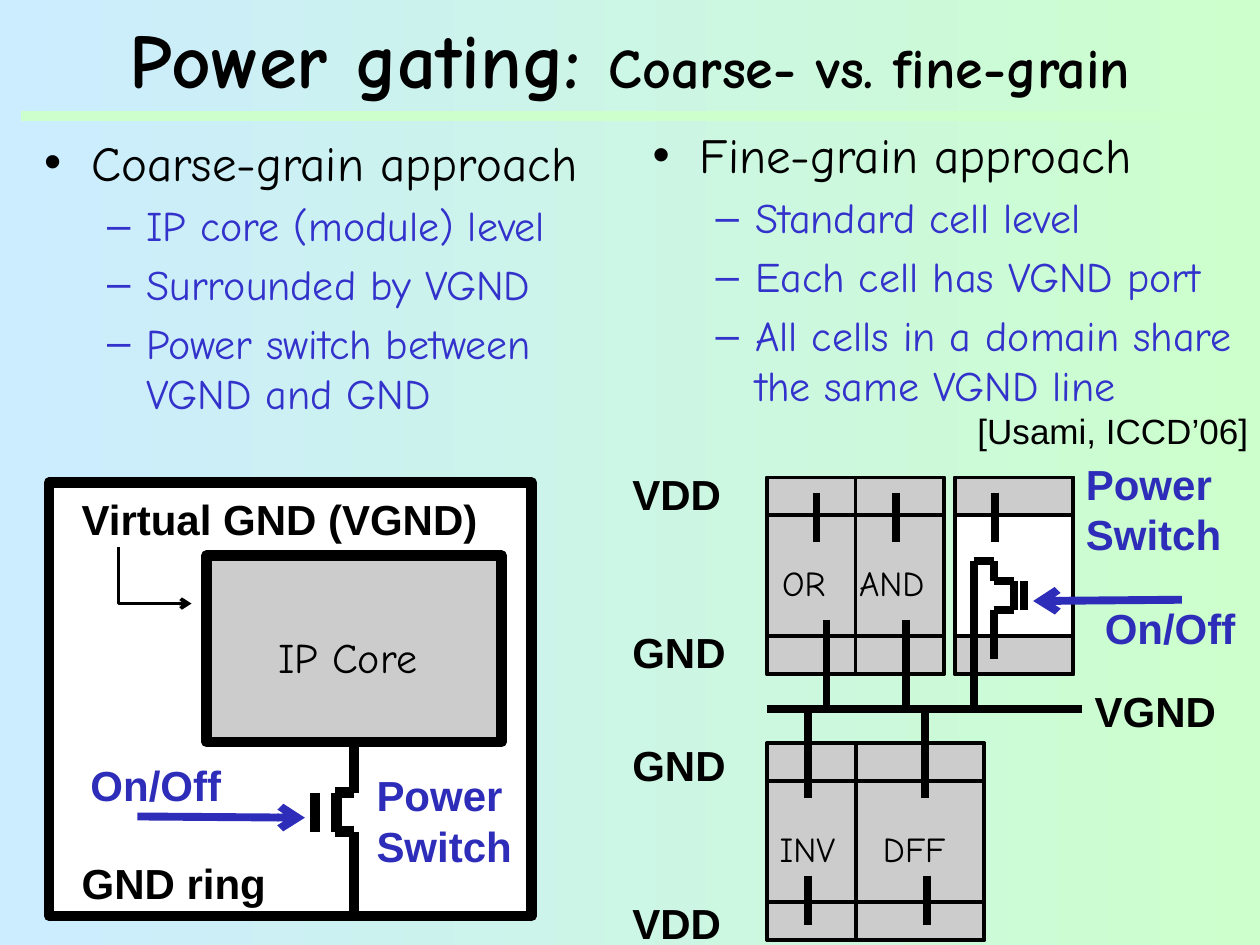
from pptx import Presentation
from pptx.dml.color import RGBColor
from pptx.enum.shapes import MSO_CONNECTOR, MSO_SHAPE
from pptx.enum.text import MSO_ANCHOR, MSO_AUTO_SIZE, PP_ALIGN
from pptx.oxml.ns import qn
from pptx.util import Inches, Pt
from lxml.etree import SubElement

THEME = dict(
    black="000000", white="FFFFFF", gray="CCCCCC", blue="2D2DB9", item="3333CC",
    sky="CCECFF", mint="CCFFCC", hand="Comic Neue", sans="Arial",
    title=44, sub=32, head=28, text=24, small=20, thick=6, wire=4.5, edge=2.25, thin=2,
)

TITLE = [("Power gating: ", "title"), ("Coarse- vs. fine-grain", "sub")]
LISTS = [
    ((0.25, 1, 4.67, 2.05), "Coarse-grain approach",
     ["IP core (module) level", "Surrounded by VGND",
      "Power switch between VGND and GND"]),
    ((5.08, 0.94, 5.08, 2.42), "Fine-grain approach",
     ["Standard cell level", "Each cell has VGND port",
      "All cells in a domain share the same VGND line"]),
]
BOXES = [
    ((0.39, 3.83, 3.83, 3.44), "white"),
    ((1.64, 4.41, 2.34, 1.48), "gray"),
]
TOP, LOW, TALL, RAIL = 3.79, 5.9, 1.56, 0.3
CELLS = [
    (7.58, TOP, 0.94, "white"),
    (6.09, TOP, 0.7, "gray"),
    (6.79, TOP, 0.7, "gray"),
    (6.09, LOW, 0.7, "gray"),
    (6.79, LOW, 1.02, "gray"),
]
GATES = [
    ("OR", (6.11, 4.41, 0.6, 0.44)),
    ("AND", (6.72, 4.41, 0.83, 0.44)),
    ("INV", (6.09, 6.52, 0.76, 0.44)),
    ("DFF", (6.91, 6.52, 0.74, 0.44)),
]
NAMES = [
    ("GND ring", (0.55, 6.76, 1.67, 0.51)),
    ("Virtual GND (VGND)", (0.55, 3.87, 3.46, 0.51)),
    ("VDD", (4.92, 3.67, 0.91, 0.51)),
    ("GND", (4.92, 4.92, 0.95, 0.51)),
    ("GND", (4.92, 5.82, 0.95, 0.51)),
    ("VDD", (4.92, 7.07, 0.91, 0.51)),
    ("VGND", (8.59, 5.39, 1.17, 0.51)),
]
NOTES = [
    ("Power\nSwitch", (2.89, 6.06, 1.33, 0.91)),
    ("On/Off", (0.62, 5.98, 1.33, 0.51)),
    ("Power\nSwitch", (8.52, 3.59, 1.33, 0.91)),
    ("On/Off", (8.67, 4.73, 1.33, 0.51)),
]
CORE = [
    (2.81, 5.9, 2.81, 6.29), (2.66, 6.29, 2.81, 6.29), (2.67, 6.29, 2.67, 6.6),
    (2.66, 6.6, 2.81, 6.6), (2.81, 6.6, 2.81, 7.27), (2.5, 6.29, 2.5, 6.6),
]
BUS = 5.63
FINE = [
    (6.09, BUS, 8.59, BUS), (7.73, BUS, 7.73, 4.45), (7.73, 4.45, 7.89, 4.45),
    (7.89, 4.45, 7.89, 4.61), (7.89, 4.61, 8.05, 4.61), (8.05, 4.61, 8.05, 4.84),
    (7.89, 4.84, 8.05, 4.84), (7.89, 4.84, 7.89, 5.23), (8.13, 4.61, 8.13, 4.84),
]
STUBS = [
    (3.91, 4.3, (6.48, 7.11, 7.9)),
    (4.92, BUS, (6.56, 7.19)),
    (BUS, 6.33, (6.41, 7.34)),
    (6.95, 7.34, (6.41, 7.36)),
]
ARROWS = [(1.09, 6.48, 2.42, 6.49), (9.38, 4.76, 8.2, 4.77)]
HOOK = [(0.94, 4.34), (0.94, 4.79), (1.52, 4.79)]


def tint(name):
    return RGBColor.from_string(THEME[name])


def write(par, text, size="text", color="black", font="sans", bold=False):
    for i, part in enumerate(text.split("\n")):
        if i:
            par.add_line_break()
        run = par.add_run()
        run.text = part
        run.font.size = Pt(THEME[size])
        run.font.name = THEME[font]
        run.font.bold = bold
        run.font.color.rgb = tint(color)


def place(shape, box):
    shape.left, shape.top, shape.width, shape.height = map(Inches, box)


def label(text, box, wrap=False, **style):
    frame = shapes.add_textbox(*map(Inches, box)).text_frame
    frame.word_wrap = wrap
    write(frame.paragraphs[0], text, **style)


def block(box, fill, width):
    shape = shapes.add_shape(MSO_SHAPE.RECTANGLE, *map(Inches, box))
    shape.shadow.inherit = False
    shape.fill.solid()
    shape.fill.fore_color.rgb = tint(fill)
    stroke(shape, width)


def stroke(shape, width, color="black", arrow=False):
    shape.line.width = Pt(THEME[width])
    shape.line.color.rgb = tint(color)
    if arrow:
        SubElement(shape.line._get_or_add_ln(), qn("a:tailEnd"), type="arrow")


def wire(ends, width="wire", color="black", arrow=False):
    line = shapes.add_connector(MSO_CONNECTOR.STRAIGHT, *map(Inches, ends))
    stroke(line, width, color, arrow)
    SubElement(line._element.spPr, qn("a:effectLst"))


deck = Presentation()
deck.slide_width, deck.slide_height = Inches(10), Inches(7.5)
slide = deck.slides.add_slide(deck.slide_layouts[3])
shapes = slide.shapes

back = slide.background.fill
back.gradient()
back.gradient_angle = 0
for stop, name in zip(back.gradient_stops, ("sky", "mint")):
    stop.color.rgb = tint(name)

title, *bodies = slide.placeholders
place(title, (0.25, 0.08, 9.5, 0.75))
title.text_frame.vertical_anchor = MSO_ANCHOR.MIDDLE
title.text_frame.auto_size = MSO_AUTO_SIZE.NONE
head = title.text_frame.paragraphs[0]
head.alignment = PP_ALIGN.CENTER
for text, size in TITLE:
    write(head, text, size=size, font="hand", bold=True)

for body, (box, top, items) in zip(bodies, LISTS):
    place(body, box)
    frame = body.text_frame
    frame.auto_size = MSO_AUTO_SIZE.NONE
    write(frame.paragraphs[0], top, size="head", font="hand")
    for item in items:
        par = frame.add_paragraph()
        par.level = 1
        write(par, item, color="item", font="hand")

wire((0.17, 0.92, 9.92, 0.92), "thick", "mint")

for box, fill in BOXES:
    block(box, fill, "thick")
for ends in CORE:
    wire(ends, "thick")
pen = shapes.build_freeform(*map(Inches, HOOK[0]))
pen.add_line_segments([tuple(map(Inches, dot)) for dot in HOOK[1:]], close=False)
hook = pen.convert_to_shape()
hook.shadow.inherit = False
hook.fill.background()
stroke(hook, "thin", arrow=True)

for left, top, width, fill in CELLS:
    block((left, top, width, TALL), fill, "edge")
    for rail in (top, top + TALL - RAIL):
        block((left, rail, width, RAIL), "gray", "edge")
for ends in FINE:
    wire(ends)
for start, end, spots in STUBS:
    for x in spots:
        wire((x, start, x, end))
for ends in ARROWS:
    wire(ends, color="blue", arrow=True)

label("IP Core", (2.11, 4.96, 1.39, 0.5), font="hand")
label("[Usami, ICCD’06]", (7.66, 3.2, 2.37, 0.44), size="small")
for text, box in GATES:
    label(text, box, size="small", font="hand")
for text, box in NAMES:
    label(text, box, bold=True)
for text, box in NOTES:
    label(text, box, wrap=True, color="blue", bold=True)

deck.save("out.pptx")
